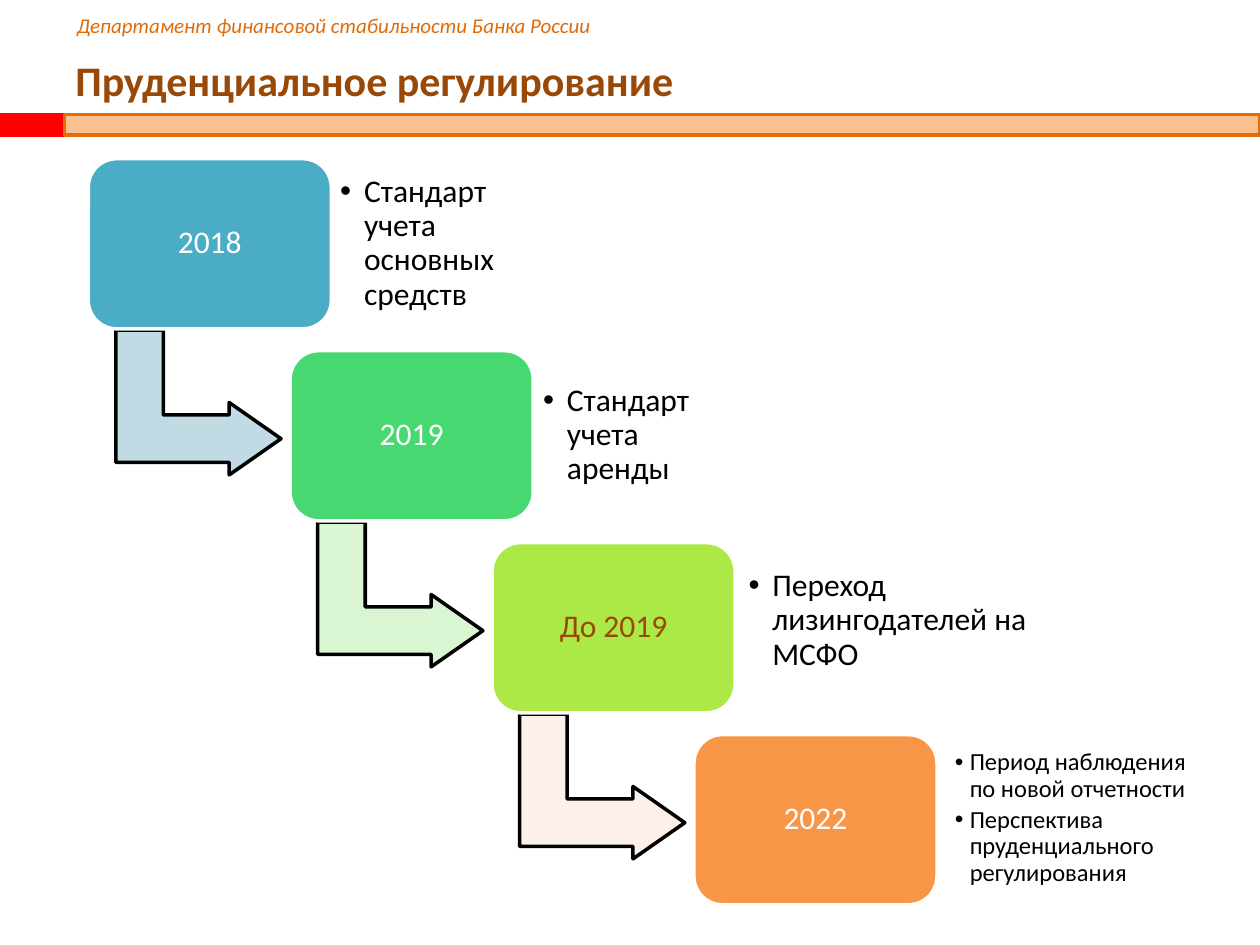
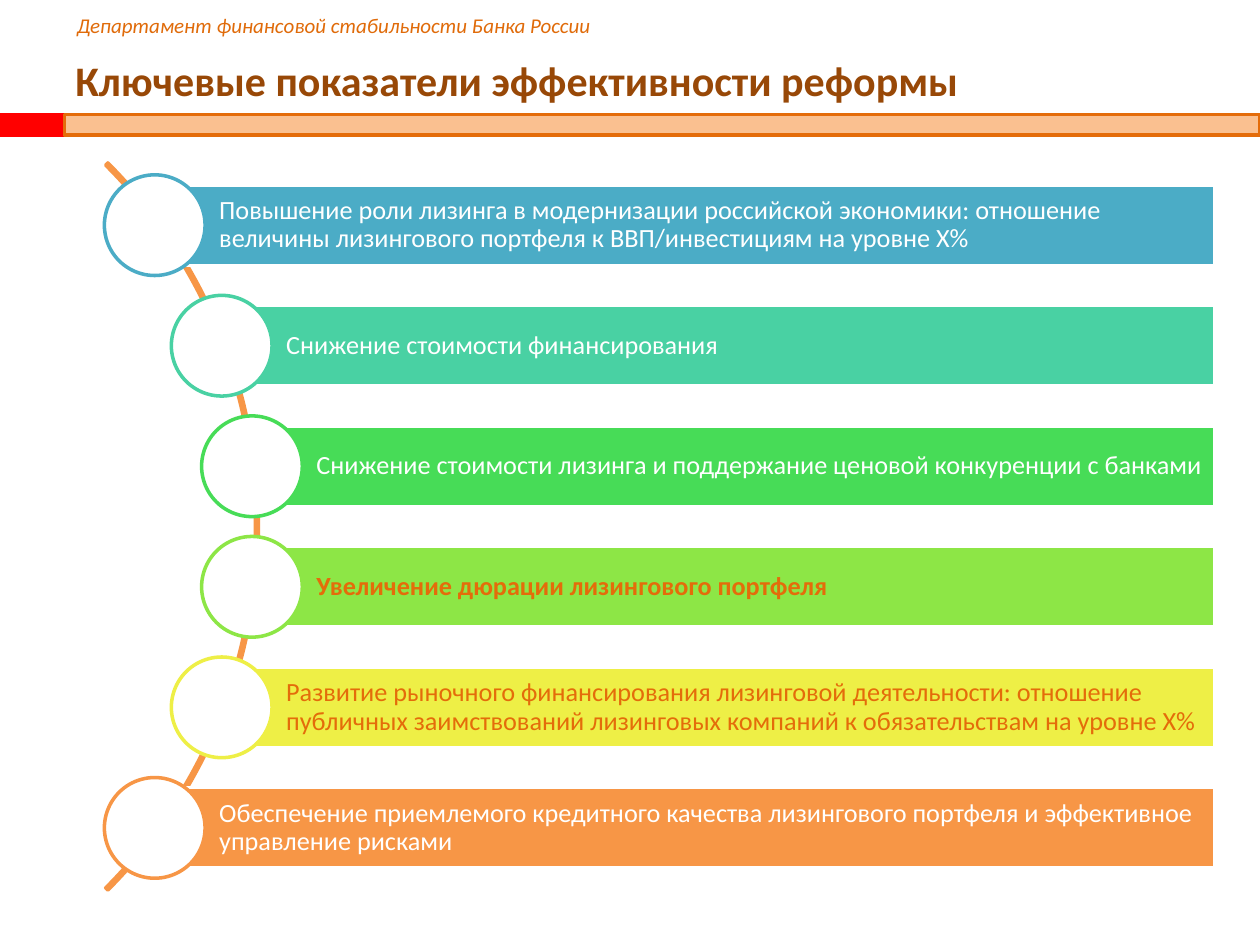
import pptx
import pptx.util
import pptx.dml.color
import pptx.enum.shapes
import pptx.enum.text
import pptx.oxml.ns
from lxml import etree

Cm = pptx.util.Cm
Pt = pptx.util.Pt
SHAPES = pptx.enum.shapes.MSO_SHAPE
ALIGN = pptx.enum.text.PP_ALIGN
ANCHOR = pptx.enum.text.MSO_ANCHOR

COLORS = {
    "white": "FFFFFF", "black": "000000", "red": "FF0000", "peach": "FAC090",
    "header": "E06B0A", "accent": "E46C0A", "brown": "984807",
    "blue": "4BACC6", "teal": "49D1A3", "mint": "47D872", "green": "47DC57",
    "grass": "8DE646", "lime": "ACE946", "yellow": "EEEF46", "orange": "F79646",
    "pale blue": "C1DBE5", "pale green": "D9F5D1", "pale pink": "FDEFE9",
}


class SlideBuilder:
    """Holds the deck style and draws elements on the current slide."""

    font = "Calibri"
    department = "Департамент финансовой стабильности Банка России"

    def __init__(self):
        self.deck = pptx.Presentation()
        self.deck.slide_width = Cm(25.4)
        self.deck.slide_height = Cm(19.05)
        self.page = None

    def color(self, name):
        return pptx.dml.color.RGBColor.from_string(COLORS[name])

    def start_page(self, title):
        self.page = self.deck.slides.add_slide(self.deck.slide_layouts[6])
        self.text((1.3, 0.13, 16.59, 0.76), [self.department], 12, "header", italic=True)
        self.shape(SHAPES.RECTANGLE, (0, 2.31, 1.3, 0.41), "red", "red")
        self.shape(SHAPES.RECTANGLE, (1.3, 2.31, 24.1, 0.41), "peach", "accent")
        self.text((1.27, 0.91, 21.44, 1.4), [title], 24, "brown", bold=True, anchor=ANCHOR.MIDDLE)

    def shape(self, kind, place, fill, line, adjustments=(), rotation=0):
        shape = self.page.shapes.add_shape(kind, *map(Cm, place))
        shape.shadow.inherit = False
        shape.rotation = rotation
        for index, value in enumerate(adjustments):
            shape.adjustments[index] = value
        if fill:
            shape.fill.solid()
            shape.fill.fore_color.rgb = self.color(fill)
        else:
            shape.fill.background()
        shape.line.color.rgb = self.color(line)
        shape.line.width = Pt(2)
        return shape

    def text(self, place, lines, size, color, **style):
        box = self.page.shapes.add_textbox(*map(Cm, place))
        self.set_text(box, lines, size, color, **style)

    def set_text(self, box, lines, size, color, bold=False, italic=False, align=ALIGN.LEFT,
                 anchor=ANCHOR.TOP, insets=(0.25, 0.13, 0.25, 0.13), spacing=1, indent=0):
        frame = box.text_frame
        frame.word_wrap = True
        frame.vertical_anchor = anchor
        (frame.margin_left, frame.margin_top,
         frame.margin_right, frame.margin_bottom) = map(Cm, insets)
        for index, line in enumerate(lines):
            para = frame.add_paragraph() if index else frame.paragraphs[0]
            para.alignment = align
            para.line_spacing = spacing
            if indent:
                if index < len(lines) - 1:
                    para.space_after = Pt(2.5)
                self.bullet(para, indent)
            span = para.add_run()
            span.text = line
            span.font.name = self.font
            span.font.size = Pt(size)
            span.font.bold = bold
            span.font.italic = italic
            span.font.color.rgb = self.color(color)

    def bullet(self, para, indent):
        properties = para._p.get_or_add_pPr()
        properties.set("marL", str(Cm(indent)))
        properties.set("indent", str(-Cm(indent)))
        qn = pptx.oxml.ns.qn
        etree.SubElement(properties, qn("a:buFont")).set("typeface", "Arial")
        etree.SubElement(properties, qn("a:buChar")).set("char", "•")

    def arrow(self, left, top, fill):
        self.shape(SHAPES.BENT_UP_ARROW, (left, top, 2.92, 3.33), fill, "black",
                   (0.328, 0.25, 0.358), rotation=90)

    def stage(self, left, top, label, fill, color):
        box = self.shape(SHAPES.ROUNDED_RECTANGLE, (left, top, 4.9, 3.43), fill, "white", (0.167,))
        self.set_text(box, [label], 18, color, align=ALIGN.CENTER, anchor=ANCHOR.MIDDLE, spacing=0.9)

    def bullets(self, left, top, width, lines, size, indent, inset):
        self.text((left, top, width, 2.77), lines, size, "black", anchor=ANCHOR.MIDDLE,
                  insets=(inset,) * 4, spacing=0.9, indent=indent)

    def indicator(self, left, top, label, fill, color, bold):
        height, diameter = 1.62, 2.03
        bar = self.shape(SHAPES.RECTANGLE, (left, top, 24.49 - left, height), fill, "white")
        self.set_text(bar, [label], 15, color, bold=bold, anchor=ANCHOR.MIDDLE,
                      insets=(1.3, 0.1, 0.1, 0.1), spacing=0.9)
        self.shape(SHAPES.OVAL, (left - diameter / 2, top + (height - diameter) / 2,
                                 diameter, diameter), "white", fill)


def build_regulation(builder):
    builder.start_page("Пруденциальное регулирование")
    stages = [
        ("2018", "blue", "white", "pale blue",
         (6.68, 3.53, 3.58, ["Стандарт учета основных средств"], 18, 0.48, 0.18)),
        ("2019", "mint", "white", "pale green",
         (10.77, 7.39, 3.58, ["Стандарт учета аренды"], 18, 0.48, 0.18)),
        ("До 2019", "lime", "brown", "pale pink",
         (14.91, 11.13, 6.58, ["Переход лизингодателей на МСФО"], 18, 0.48, 0.18)),
        ("2022", "orange", "white", None,
         (19.1, 15.11, 5.46, ["Период наблюдения по новой отчетности",
                              "Перспектива пруденциального регулирования"], 14, 0.3, 0.15)),
    ]
    for index, (label, fill, color, arrow_fill, note) in enumerate(stages):
        left, top = 1.78 + 4.07 * index, 3.2 + 3.87 * index
        if arrow_fill:
            builder.arrow(left + 0.76, top + 3.25, arrow_fill)
        builder.stage(left, top, label, fill, color)
        builder.bullets(*note)


def build_indicators(builder):
    builder.start_page("Ключевые показатели эффективности реформы")
    builder.shape(SHAPES.BLOCK_ARC, (-15.52, 0.25, 20.73, 20.73), None, "orange", (189, 27, 0.003))
    indicators = [
        (3.12, "Повышение роли лизинга в модернизации российской экономики: отношение "
               "величины лизингового портфеля к ВВП/инвестициям на уровне X%",
         "blue", "white", False),
        (4.47, "Снижение стоимости финансирования", "teal", "white", False),
        (5.08, "Снижение стоимости лизинга и поддержание ценовой конкуренции с банками",
         "green", "white", False),
        (5.08, "Увеличение дюрации лизингового портфеля", "grass", "accent", True),
        (4.47, "Развитие рыночного финансирования лизинговой деятельности: отношение "
               "публичных заимствований лизинговых компаний к обязательствам на уровне X%",
         "yellow", "accent", False),
        (3.12, "Обеспечение приемлемого кредитного качества лизингового портфеля "
               "и эффективное управление рисками", "orange", "white", False),
    ]
    for index, (left, *details) in enumerate(indicators):
        builder.indicator(left, 3.73 + 2.43 * index, *details)


def main():
    builder = SlideBuilder()
    build_regulation(builder)
    build_indicators(builder)
    builder.deck.save("out.pptx")


if __name__ == "__main__":
    main()
